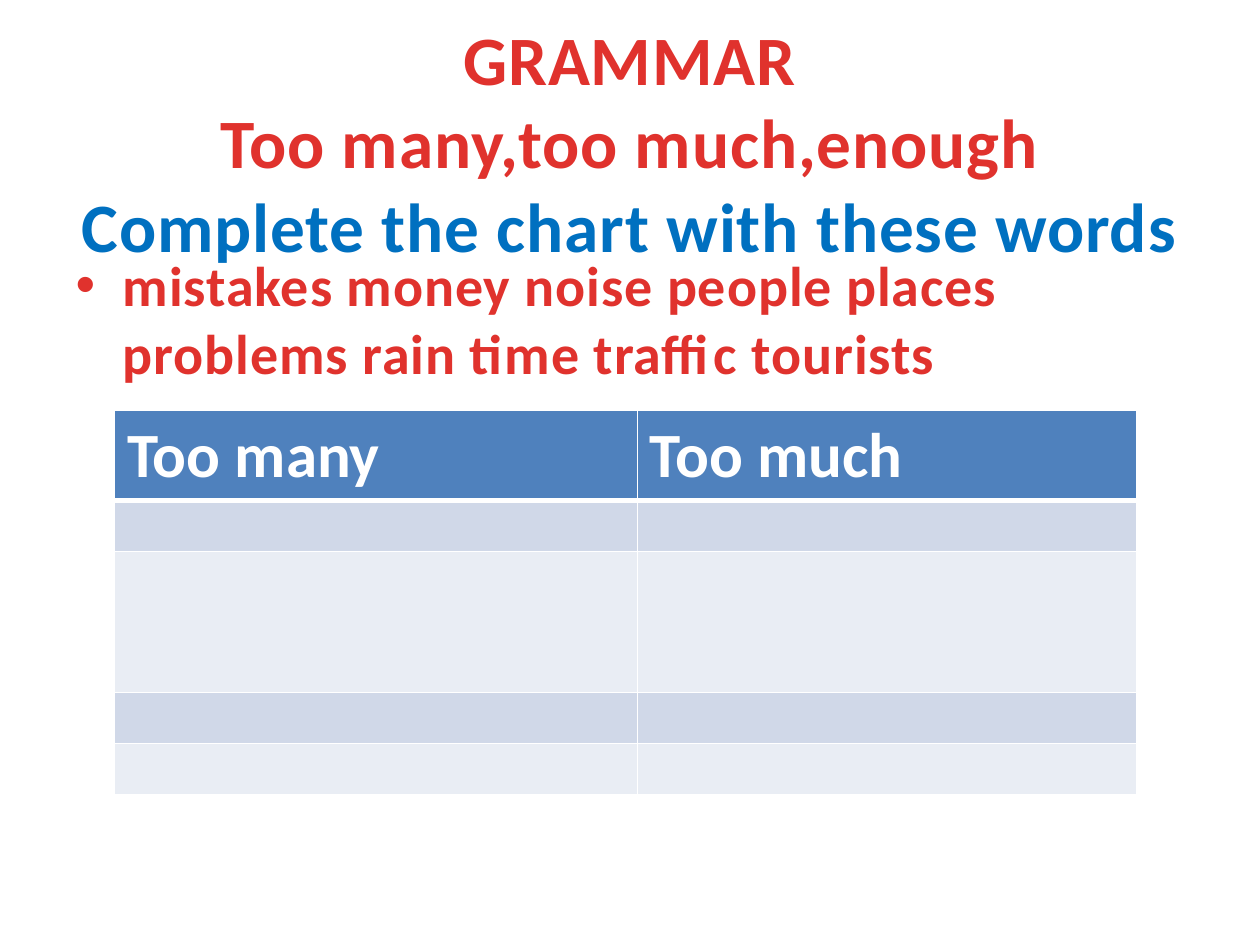
import pptx
import pptx.util
import pptx.dml.color
import pptx.enum.text
import lxml.etree
import pptx.oxml.ns

Cm = pptx.util.Cm
Pt = pptx.util.Pt
FONT = "Calibri"
HUE = {
    "red": "E0322D",
    "blue": "0070C0",
    "white": "FFFFFF",
    "head": "4F81BD",
    "dark": "D0D8E8",
    "light": "E9EDF4",
}


def color(name):
    return pptx.dml.color.RGBColor.from_string(HUE[name])


def add_run(para, text, size, hue, space=0):
    run = para.add_run()
    run.text = text
    run.font.name = FONT
    run.font.size = Pt(size)
    run.font.bold = True
    run.font.color.rgb = color(hue)
    if space:
        run.font._element.set("spc", str(space))


def fill_holder(shape, box, lines, size):
    """Place a placeholder and write its lines in one paragraph."""
    shape.left, shape.top, shape.width, shape.height = map(Cm, box)
    frame = shape.text_frame
    frame.auto_size = pptx.enum.text.MSO_AUTO_SIZE.NONE
    para = frame.paragraphs[0]
    para.space_before = Pt(0)
    for num, (text, hue) in enumerate(lines):
        if num:
            para.add_line_break()
        add_run(para, text, size, hue, space=50)


def add_edges(cell, base):
    """Draw white borders; base is the width of the bottom one."""
    props = cell._tc.get_or_add_tcPr()
    for spot, (side, width) in enumerate(zip("LRTB", (1, 1, 1, base))):
        line = lxml.etree.Element(pptx.oxml.ns.qn(f"a:ln{side}"), w=str(Pt(width)))
        fill = lxml.etree.SubElement(line, pptx.oxml.ns.qn("a:solidFill"))
        lxml.etree.SubElement(fill, pptx.oxml.ns.qn("a:srgbClr"), val=HUE["white"])
        props.insert(spot, line)


def add_grid(slide, left, top, cols, rows, heads):
    """Add a table with a header row and banded empty rows."""
    frame = slide.shapes.add_table(
        len(rows), len(cols), Cm(left), Cm(top), Cm(sum(cols)), Cm(sum(rows)))
    table = frame.table
    for col, width in zip(table.columns, cols):
        col.width = Cm(width)
    for num, (row, height) in enumerate(zip(table.rows, rows)):
        row.height = Cm(height)
        band = "head" if num == 0 else "dark" if num % 2 else "light"
        for cell in row.cells:
            cell.fill.solid()
            cell.fill.fore_color.rgb = color(band)
            add_edges(cell, 1 if num else 3)
    for cell, text in zip(table.rows[0].cells, heads):
        add_run(cell.text_frame.paragraphs[0], text, 36, "white")


def main():
    deck = pptx.Presentation()
    deck.slide_width, deck.slide_height = Cm(25.4), Cm(19.05)
    slide = deck.slides.add_slide(deck.slide_layouts[1])

    # Title
    fill_holder(slide.shapes.title, (1.27, 0.76, 22.86, 4.17), [
        ("GRAMMAR", "red"),
        ("Too many,too much,enough", "red"),
        ("Complete the chart with these words", "blue"),
    ], 39.6)

    # Word list
    fill_holder(slide.placeholders[1], (1.27, 4.93, 22.86, 12.09), [
        ("mistakes money noise people places", "red"),
        ("problems rain time traffic tourists", "red"),
    ], 32)

    # Chart to complete
    add_grid(slide, 2.31, 8.28, (10.54, 10.06), (1.79, 1.02, 2.84, 1.02, 1.02),
             ("Too many", "Too much"))

    deck.save("out.pptx")


if __name__ == "__main__":
    main()
